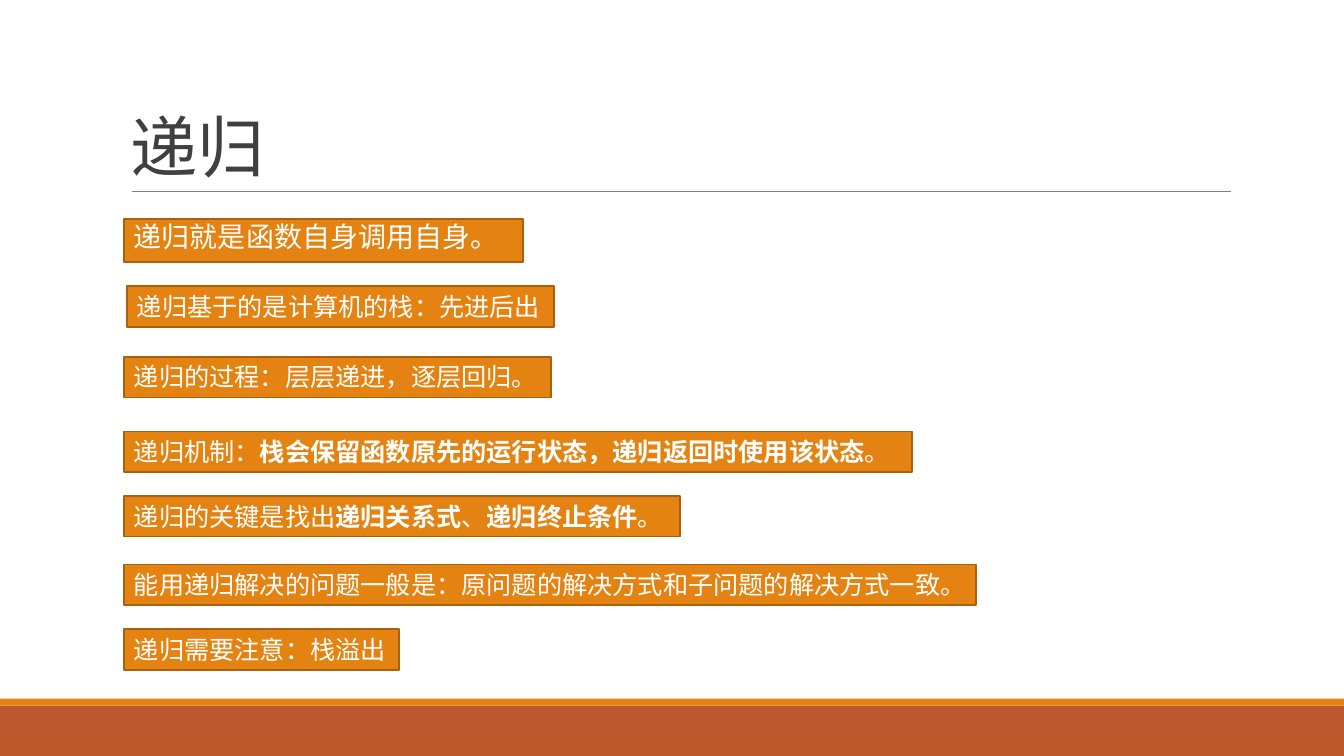
from pptx import Presentation
from pptx.dml.color import RGBColor
from pptx.enum.shapes import MSO_CONNECTOR, MSO_SHAPE
from pptx.enum.text import MSO_ANCHOR, MSO_AUTO_SIZE, PP_ALIGN
from pptx.oxml.ns import qn
from pptx.util import Pt
from lxml import etree

RECT = MSO_SHAPE.RECTANGLE
STRAIGHT = MSO_CONNECTOR.STRAIGHT
TOP, BOTTOM = MSO_ANCHOR.TOP, MSO_ANCHOR.BOTTOM
FIT_TEXT = MSO_AUTO_SIZE.SHAPE_TO_FIT_TEXT
LEFT = PP_ALIGN.LEFT

WIDTH, HEIGHT = 960, 540
ORANGE, RUST, BORDER = "E48312", "BD582C", "A9610D"
WHITE, DARK, GREY = "FFFFFF", "404040", "808080"
FONT = "Calibri"

TITLE = "递归"
DEFINITION = [("递归就是函数自身调用自身。", False)]
# left, top, width, then (text, bold) runs
POINTS = [
    (90.72, 204.48, 305.28, [("递归基于的是计算机的栈：先进后出", False)]),
    (88.56, 254.88, 305.28, [("递归的过程：层层递进，逐层回归。", False)]),
    (88.56, 308.16, 563.04, [("递归机制：", False),
                             ("栈会保留函数原先的运行状态，递归返回时使用该状态", True),
                             ("。", False)]),
    (88.56, 354.24, 397.44, [("递归的关键是找出", False), ("递归关系式", True),
                             ("、", False), ("递归终止条件", True), ("。", False)]),
    (88.56, 403.2, 608.4,
     [("能用递归解决的问题一般是：原问题的解决方式和子问题的解决方式一致。", False)]),
    (88.56, 449.28, 196.56, [("递归需要注意：栈溢出", False)]),
]
POINT_HEIGHT = 29.08


def rgb(code):
    return RGBColor.from_string(code)


def add_bar(left, top, width, height, fill, border=None):
    bar = slide.shapes.add_shape(RECT, Pt(left), Pt(top), Pt(width), Pt(height))
    bar.shadow.inherit = False
    bar.fill.solid()
    bar.fill.fore_color.rgb = rgb(fill)
    if border:
        bar.line.color.rgb = rgb(border)
        bar.line.width = Pt(1.25)
    else:
        bar.line.fill.background()
    return bar


def write(frame, runs, size, color):
    """Fill the first paragraph with (text, bold) runs."""
    paragraph = frame.paragraphs[0]
    paragraph.alignment = LEFT
    paragraph.font.name = FONT
    paragraph.font.size = Pt(size)
    paragraph.font.color.rgb = rgb(color)
    for text, bold in runs:
        run = paragraph.add_run()
        run.text = text
        if bold:
            run.font.bold = True
    return paragraph


def add_statement(left, top, width, height, runs, size):
    frame = add_bar(left, top, width, height, ORANGE, BORDER).text_frame
    frame.vertical_anchor = TOP
    return frame, write(frame, runs, size, WHITE)


prs = Presentation()
prs.slide_width, prs.slide_height = Pt(WIDTH), Pt(HEIGHT)
slide = prs.slides.add_slide(prs.slide_layouts[6])

add_bar(0, 504, WIDTH, 36, RUST)
add_bar(0, 499, WIDTH, 5, ORANGE)

rule = slide.shapes.add_connector(STRAIGHT, Pt(94.32), Pt(136.8), Pt(879.12), Pt(136.8))
rule.line.color.rgb = rgb(GREY)
rule.line.width = Pt(0.5)
etree.SubElement(rule._element.spPr, qn("a:effectLst"))

title = slide.shapes.add_textbox(Pt(86.4), Pt(22.32), Pt(792), Pt(114.48)).text_frame
title.word_wrap = True
title.vertical_anchor = BOTTOM
heading = write(title, [(TITLE, False)], 48, DARK)
heading.line_spacing = 0.85
heading.runs[0].font._element.set("spc", "-50")

definition, sentence = add_statement(88.56, 156.24, 285.12, 30.96, DEFINITION, 20)
definition.word_wrap = True
definition.margin_right = 0
sentence.line_spacing = 0.9

for left, top, width, runs in POINTS:
    point, _ = add_statement(left, top, width, POINT_HEIGHT, runs, 18)
    point.word_wrap = False
    point.auto_size = FIT_TEXT

prs.save("out.pptx")
